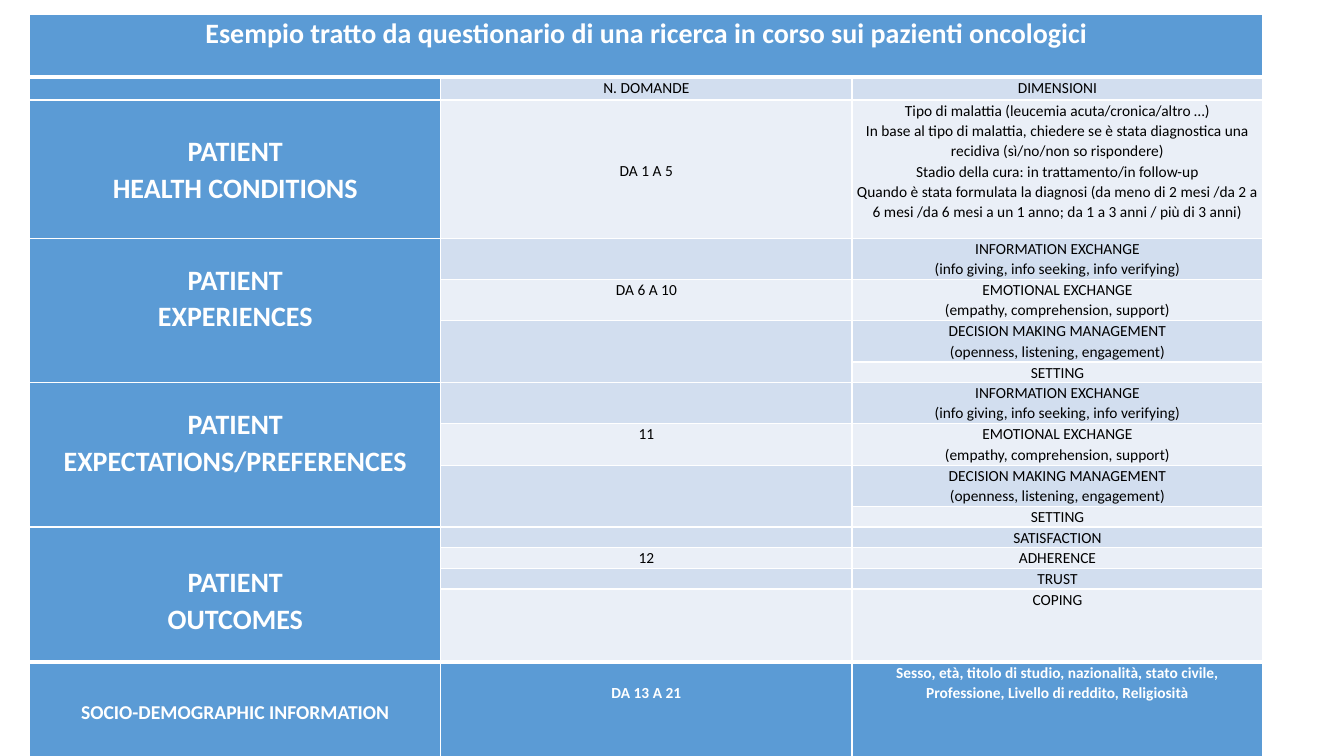
import pptx
import pptx.dml.color
import pptx.enum.text
import pptx.util
from lxml import etree
from pptx.oxml.ns import qn

Cm = pptx.util.Cm
Pt = pptx.util.Pt
RGBColor = pptx.dml.color.RGBColor
Anchor = pptx.enum.text.MSO_ANCHOR

BLUE = RGBColor(0x5B, 0x9B, 0xD5)
BAND_DARK = RGBColor(0xD2, 0xDE, 0xEF)
BAND_LIGHT = RGBColor(0xEA, 0xEF, 0xF7)
WHITE = RGBColor(0xFF, 0xFF, 0xFF)
BLACK = RGBColor(0, 0, 0)

ONE_LINE, TWO_LINES = 0.52, 1.04
EXCHANGES = [
    (TWO_LINES, "INFORMATION EXCHANGE\n(info giving, info seeking, info verifying)"),
    (TWO_LINES, "EMOTIONAL EXCHANGE\n(empathy, comprehension, support)"),
    (TWO_LINES, "DECISION MAKING MANAGEMENT\n(openness, listening, engagement)"),
    (ONE_LINE, "SETTING"),
]
OUTCOMES = [(ONE_LINE, "SATISFACTION"), (ONE_LINE, "ADHERENCE"),
            (ONE_LINE, "TRUST"), (1.85, "COPING")]
CONDITIONS = "\n".join([
    "Tipo di malattia (leucemia acuta/cronica/altro …)",
    "In base al tipo di malattia, chiedere se è stata diagnostica una "
    "recidiva (sì/no/non so rispondere)",
    "Stadio della cura: in trattamento/in follow-up",
    "Quando è stata formulata la diagnosi (da meno di 2 mesi /da 2 a "
    "6 mesi /da 6 mesi a un 1 anno; da 1 a 3 anni / più di 3 anni)",
])
# Topic, question numbers, (row height, dimension) pairs
SECTIONS = [
    ("", "N. DOMANDE", [(0.58, "DIMENSIONI")]),
    ("PATIENT\nHEALTH CONDITIONS", "DA 1 A 5", [(3.48, CONDITIONS)]),
    ("PATIENT\nEXPERIENCES", "DA 6 A 10", EXCHANGES),
    ("PATIENT\nEXPECTATIONS/PREFERENCES", "11", EXCHANGES),
    ("PATIENT\nOUTCOMES", "12", OUTCOMES),
    ("SOCIO-DEMOGRAPHIC INFORMATION", "DA 13 A 21",
     [(2.51, "Sesso, età, titolo di studio, nazionalità, stato civile,\n"
             "Professione, Livello di reddito, Religiosità")]),
]
TITLE = "Esempio tratto da questionario di una ricerca in corso sui pazienti oncologici"
TITLE_HEIGHT = 1.57

BODY = {"size": Pt(11), "bold": False, "color": BLACK}
STRONG = {"size": Pt(11), "bold": True, "color": WHITE}
TOPIC = {**STRONG, "size": Pt(20)}
SMALL_TOPIC = {**STRONG, "size": Pt(14)}


class SlideBuilder:
    def __init__(self, slide):
        self.slide = slide
        self.font = "Calibri"
        self.line_spacing = 1.07

    def table(self, left, top, column_widths, row_heights):
        grid = self.slide.shapes.add_table(
            len(row_heights), len(column_widths), Cm(left), Cm(top),
            Cm(sum(column_widths)), Cm(sum(row_heights))).table
        grid.horz_banding = False
        for column, width in zip(grid.columns, column_widths):
            column.width = Cm(width)
        for row, height in zip(grid.rows, row_heights):
            row.height = Cm(height)
        return grid

    def background(self, cell, color, top_line=1, bottom_line=1):
        """Set the white borders, the fill and the margins of a cell."""
        properties = cell._tc.get_or_add_tcPr()
        for side, points in zip("LRTB", (1, 1, top_line, bottom_line)):
            line = etree.SubElement(properties, qn(f"a:ln{side}"), w=str(Pt(points)))
            solid = etree.SubElement(line, qn("a:solidFill"))
            etree.SubElement(solid, qn("a:srgbClr"), val=str(WHITE))
        cell.fill.solid()
        cell.fill.fore_color.rgb = color
        margins = {"margin_left": 0.1, "margin_right": 0.1,
                   "margin_top": 0, "margin_bottom": 0}
        for name, value in margins.items():
            setattr(cell, name, Cm(value))
        # Keeps empty cells from forcing a row taller than its text
        end = etree.SubElement(cell.text_frame.paragraphs[0]._p, qn("a:endParaRPr"))
        end.set("sz", "1100")

    def text(self, cell, words, style, **cell_format):
        if not words:
            return
        cell.text = words
        for name, value in cell_format.items():
            setattr(cell, name, value)
        for paragraph in cell.text_frame.paragraphs:
            paragraph.alignment = pptx.enum.text.PP_ALIGN.CENTER
            paragraph.line_spacing = self.line_spacing
            for run in paragraph.runs:
                run.font.name = self.font
                run.font.size = style["size"]
                run.font.bold = style["bold"]
                run.font.color.rgb = style["color"]


def fill_section(builder, grid, first, section, is_last):
    topic, questions, dimensions = section
    count = len(dimensions)
    body = STRONG if is_last else BODY
    topic_format = {"vertical_anchor": Anchor.MIDDLE}
    question_format = {}
    question_row = first
    if count > 1:
        question_row = first + 1
        topic_format["margin_bottom"] = Cm(0.64)
        grid.cell(first, 0).merge(grid.cell(first + count - 1, 0))
        if dimensions is EXCHANGES:
            grid.cell(first + 2, 1).merge(grid.cell(first + 3, 1))
    if dimensions is OUTCOMES:
        topic_format["margin_top"] = Cm(0.92)
    if is_last:
        question_format["margin_top"] = Cm(0.51)
    elif dimensions[0][1] == CONDITIONS:
        question_format["margin_top"] = Cm(1.53)

    builder.text(grid.cell(first, 0), topic, SMALL_TOPIC if is_last else TOPIC,
                 **topic_format)
    builder.text(grid.cell(question_row, 1), questions, body, **question_format)
    for row, (_, dimension) in enumerate(dimensions, first):
        builder.text(grid.cell(row, 2), dimension, body)


def main():
    deck = pptx.Presentation()
    deck.slide_width, deck.slide_height = Cm(33.87), Cm(19.05)
    builder = SlideBuilder(deck.slides.add_slide(deck.slide_layouts[6]))

    heights = [TITLE_HEIGHT] + [height for _, _, rows in SECTIONS for height, _ in rows]
    grid = builder.table(0.75, 0.37, [10.36] * 3, heights)
    last = len(heights) - 1
    for row in range(last + 1):
        for column in range(3):
            if column == 0 or row in (0, last):
                color = BLUE
            else:
                color = BAND_DARK if row % 2 else BAND_LIGHT
            builder.background(grid.cell(row, column), color,
                               top_line=3 if row in (1, last) else 1,
                               bottom_line=3 if row in (0, last - 1) else 1)

    grid.cell(0, 0).merge(grid.cell(0, 2))
    builder.text(grid.cell(0, 0), TITLE, TOPIC)
    first = 1
    for section in SECTIONS:
        fill_section(builder, grid, first, section, section is SECTIONS[-1])
        first += len(section[2])
    deck.save("out.pptx")


if __name__ == "__main__":
    main()
